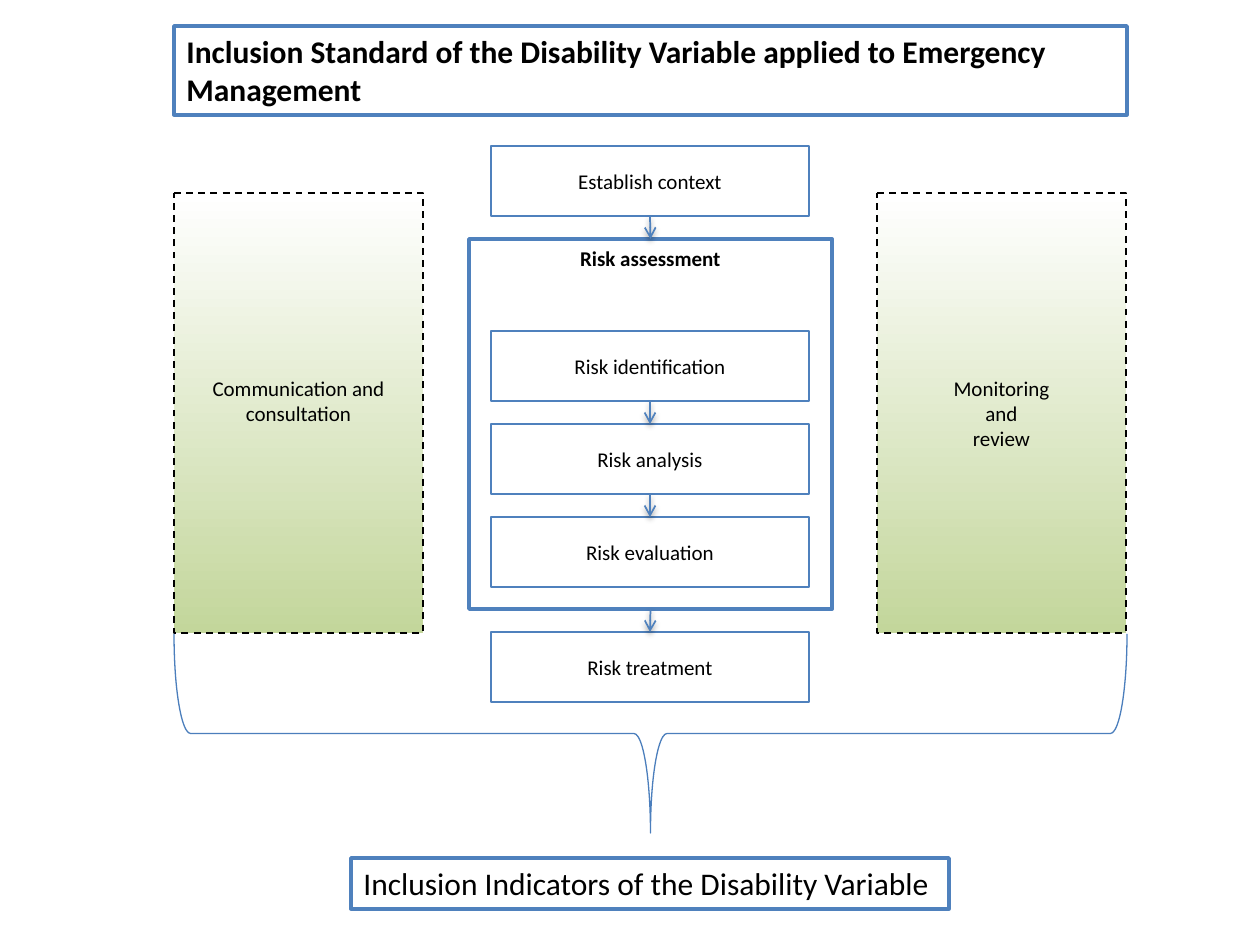
from dataclasses import dataclass

from lxml import etree
from pptx import Presentation
from pptx.dml.color import RGBColor
from pptx.enum.dml import MSO_LINE
from pptx.enum.shapes import MSO_CONNECTOR, MSO_SHAPE
from pptx.enum.text import MSO_ANCHOR, MSO_AUTO_SIZE, PP_ALIGN
from pptx.oxml.ns import qn
from pptx.util import Emu, Pt

PROCESS = MSO_SHAPE.FLOWCHART_PROCESS
RECTANGLE = MSO_SHAPE.RECTANGLE
LEFT_BRACE = MSO_SHAPE.LEFT_BRACE
STRAIGHT = MSO_CONNECTOR.STRAIGHT
DASH = MSO_LINE.DASH
TOP, MIDDLE = MSO_ANCHOR.TOP, MSO_ANCHOR.MIDDLE
LEFT, CENTER = PP_ALIGN.LEFT, PP_ALIGN.CENTER
GROW = MSO_AUTO_SIZE.SHAPE_TO_FIT_TEXT
TOP_SITE, BOTTOM_SITE = 0, 2
EMU_PER_PX = 914400 / 126


@dataclass(frozen=True)
class Theme:
    font: str = "Calibri"
    text: RGBColor = RGBColor(0, 0, 0)
    white: RGBColor = RGBColor(255, 255, 255)
    blue: RGBColor = RGBColor(0x4F, 0x81, 0xBD)
    brace: RGBColor = RGBColor(0x4B, 0x7E, 0xBC)
    green: RGBColor = RGBColor(0xC3, 0xD6, 0x9B)
    body: Pt = Pt(12)
    heading: Pt = Pt(18)
    hairline: Pt = Pt(0.75)
    thin: Pt = Pt(1)
    thick: Pt = Pt(2)


THEME = Theme()


def px(length):
    return Emu(round(length * EMU_PER_PX))


def apply_format(target, values):
    for name, value in values.items():
        setattr(target, name, value)


def set_line(shape, color, width):
    shape.line.color.rgb = color
    shape.line.width = width


def write_text(box, lines, size, bold=False, align=CENTER, **frame_format):
    frame = box.text_frame
    apply_format(frame, {"word_wrap": True, "vertical_anchor": MIDDLE, **frame_format})
    for index, line in enumerate(lines):
        para = frame.paragraphs[0] if index == 0 else frame.add_paragraph()
        para.alignment = align
        span = para.add_run()
        span.text = line
        apply_format(span.font, {"name": THEME.font, "size": size, "bold": bold})
        span.font.color.rgb = THEME.text


def add_box(page, kind, bounds, color=THEME.blue, width=THEME.thin):
    box = page.shapes.add_shape(kind, *map(px, bounds))
    box.shadow.inherit = False
    box.fill.solid()
    box.fill.fore_color.rgb = THEME.white
    set_line(box, color, width)
    return box


def add_side_panel(page, left, lines, bottom_inset=6):
    panel = add_box(page, PROCESS, (left, 193, 249, 440), THEME.text)
    panel.line.dash_style = DASH
    panel.fill.gradient()
    panel.fill.gradient_angle = 270
    for stop, color in zip(panel.fill.gradient_stops, (THEME.white, THEME.green)):
        stop.color.rgb = color
    write_text(panel, lines, THEME.body, margin_bottom=px(bottom_inset))


def add_step(page, top, label):
    step = add_box(page, PROCESS, (491, top, 318, 70))
    write_text(step, [label], THEME.body)
    return step


def add_arrow(page, upper, lower):
    arrow = page.shapes.add_connector(STRAIGHT, 0, 0, 0, 0)
    arrow.begin_connect(upper, BOTTOM_SITE)
    arrow.end_connect(lower, TOP_SITE)
    set_line(arrow, THEME.blue, THEME.thin)
    properties = arrow._element.spPr
    etree.SubElement(properties.find(qn("a:ln")), qn("a:tailEnd"), type="arrow")
    effects = etree.SubElement(properties, qn("a:effectLst"))
    shadow = etree.SubElement(
        effects, qn("a:outerShdw"), blurRad="40000", dist="20000", dir="5400000", rotWithShape="0"
    )
    color = etree.SubElement(shadow, qn("a:srgbClr"), val=str(THEME.text))
    etree.SubElement(color, qn("a:alpha"), val="38000")


def add_process(page):
    assessment = add_box(page, PROCESS, (469, 239, 363, 370), width=THEME.thick)
    write_text(assessment, ["Risk assessment"], THEME.body, bold=True, vertical_anchor=TOP)
    context = add_step(page, 146, "Establish context")
    labels = ("Risk identification", "Risk analysis", "Risk evaluation")
    stages = [add_step(page, 331 + 93 * index, label) for index, label in enumerate(labels)]
    treatment = add_step(page, 632, "Risk treatment")
    for chain in ([context, assessment, treatment], stages):
        for upper, lower in zip(chain, chain[1:]):
            add_arrow(page, upper, lower)


def add_brace(page):
    brace = add_box(page, LEFT_BRACE, (551, 257, 199, 953), THEME.brace, THEME.hairline)
    brace.fill.background()
    brace.rotation = 270


def add_banner(page, bounds, label, bold=False, wrap=True):
    banner = add_box(page, RECTANGLE, bounds, width=THEME.thick)
    write_text(
        banner, [label], THEME.heading, bold, LEFT,
        vertical_anchor=TOP, word_wrap=wrap, auto_size=GROW,
    )


def main():
    deck = Presentation()
    deck.slide_width, deck.slide_height = px(1260), px(945)
    page = deck.slides.add_slide(deck.slide_layouts[6])
    add_side_panel(page, 877, ["Monitoring", "and", "review"])
    add_side_panel(page, 174, ["Communication and consultation"], bottom_inset=31)
    add_process(page)
    add_brace(page)
    add_banner(
        page, (351, 858, 598, 51), "Inclusion Indicators of the Disability Variable", wrap=False
    )
    add_banner(
        page, (174, 26, 953, 89),
        "Inclusion Standard of the Disability Variable applied to Emergency Management", bold=True,
    )
    deck.save("out.pptx")


if __name__ == "__main__":
    main()
